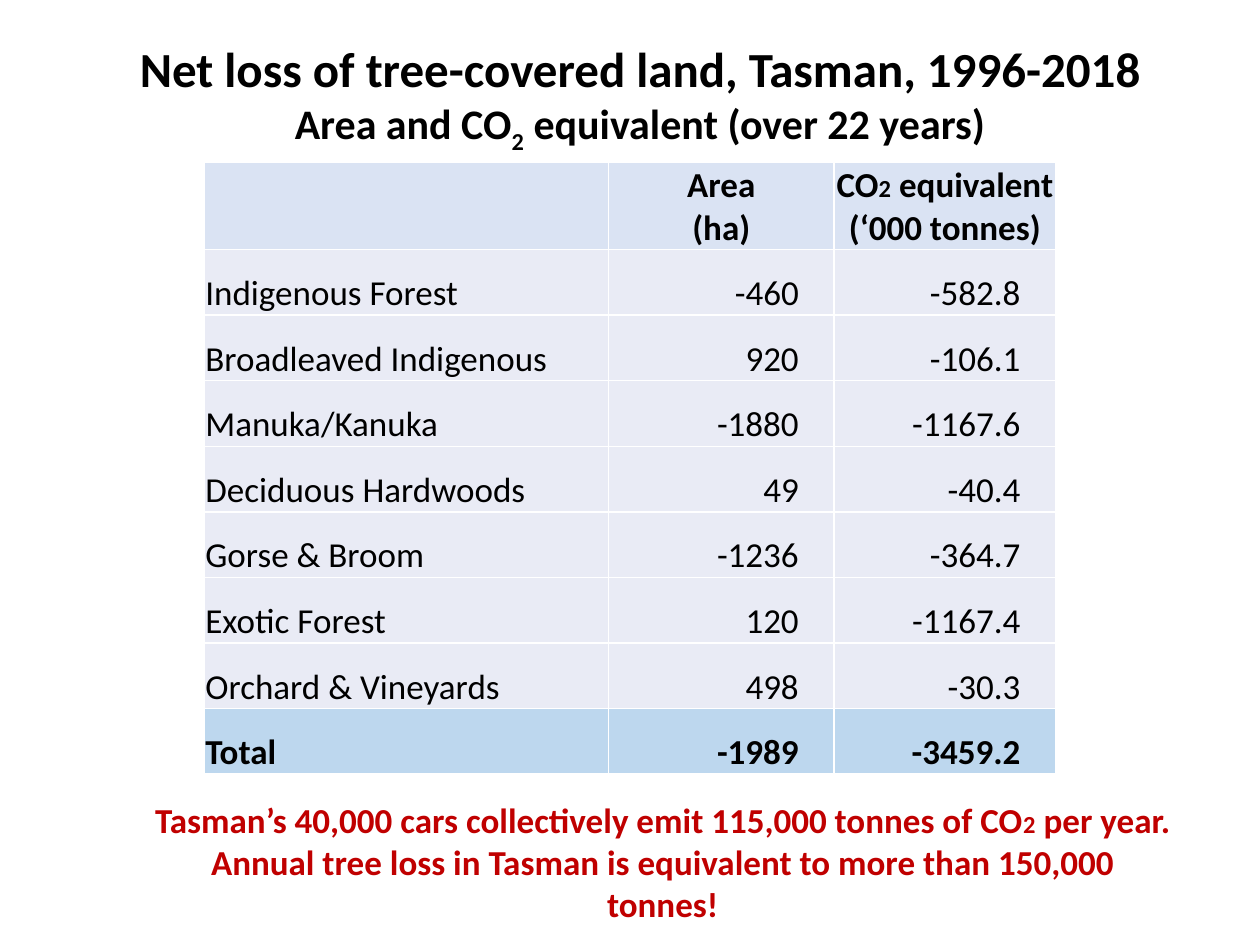
import lxml.etree
import pptx
import pptx.dml.color
import pptx.enum.text
import pptx.oxml.ns
import pptx.util

Inches = pptx.util.Inches
ALIGN = pptx.enum.text.PP_ALIGN
BLACK, RED, WHITE = "000000", "C00000", "FFFFFF"
HEADER_FILL, BODY_FILL, TOTAL_FILL = "DAE3F3", "E9EBF5", "BDD7EE"
COLUMN_WIDTHS = [3.21, 1.79, 1.76]
HEADER_HEIGHT, ROW_HEIGHT = 0.62, 0.47
LAND_COVER = [
    ("Indigenous Forest", "-460", "-582.8"),
    ("Broadleaved Indigenous", "920", "-106.1"),
    ("Manuka/Kanuka", "-1880", "-1167.6"),
    ("Deciduous Hardwoods", "49", "-40.4"),
    ("Gorse & Broom", "-1236", "-364.7"),
    ("Exotic Forest", "120", "-1167.4"),
    ("Orchard & Vineyards", "498", "-30.3"),
    ("Total", "-1989", "-3459.2"),
]


def color(hex_code):
    return pptx.dml.color.RGBColor.from_string(hex_code)


def add_span(para, text, size, bold=True, hex_code=BLACK, baseline=None):
    span = para.add_run()
    span.text = text
    span.font.name = "Calibri"
    span.font.size = pptx.util.Pt(size)
    span.font.bold = bold
    span.font.color.rgb = color(hex_code)
    if baseline:
        span._r.get_or_add_rPr().set("baseline", str(baseline * 1000))


def fill_frame(frame, paragraphs, align, line_spacing=None, **style):
    """Write paragraphs, each a list of (text, size) or (text, size, baseline)."""
    for index, spans in enumerate(paragraphs):
        para = frame.add_paragraph() if index else frame.paragraphs[0]
        para.alignment = align
        if line_spacing:
            para.line_spacing = line_spacing
        for text, size, *baseline in spans:
            add_span(para, text, size, baseline=baseline[0] if baseline else None, **style)


def add_text(page, left, top, width, height, paragraphs, hex_code=BLACK):
    box = page.shapes.add_textbox(Inches(left), Inches(top), Inches(width), Inches(height))
    box.text_frame.word_wrap = True
    fill_frame(box.text_frame, paragraphs, ALIGN.CENTER, hex_code=hex_code)


def style_cell(cell, fill, right_margin=0.01):
    properties = cell._tc.get_or_add_tcPr()
    for side in ("a:lnL", "a:lnR", "a:lnT", "a:lnB"):
        line = lxml.etree.SubElement(properties, pptx.oxml.ns.qn(side), w="12700")
        solid = lxml.etree.SubElement(line, pptx.oxml.ns.qn("a:solidFill"))
        lxml.etree.SubElement(solid, pptx.oxml.ns.qn("a:srgbClr"), val=WHITE)
    cell.fill.solid()
    cell.fill.fore_color.rgb = color(fill)
    cell.vertical_anchor = pptx.enum.text.MSO_ANCHOR.BOTTOM
    cell.margin_left = cell.margin_top = Inches(0.01)
    cell.margin_right = Inches(right_margin)
    cell.margin_bottom = 0


def add_loss_table(page, left, top):
    heights = [HEADER_HEIGHT] + [ROW_HEIGHT] * len(LAND_COVER)
    table = page.shapes.add_table(
        len(heights), len(COLUMN_WIDTHS), Inches(left), Inches(top),
        Inches(sum(COLUMN_WIDTHS)), Inches(sum(heights))).table
    table.first_row = table.horz_banding = False
    for column, width in zip(table.columns, COLUMN_WIDTHS):
        column.width = Inches(width)
    for row, height in zip(table.rows, heights):
        row.height = Inches(height)

    headings = [
        [],
        [[("Area", 20)], [("(ha)", 20)]],
        [[("CO", 20), ("2", 14), (" equivalent (‘000 tonnes)", 20)]],
    ]
    for column, paragraphs in enumerate(headings):
        cell = table.cell(0, column)
        style_cell(cell, HEADER_FILL)
        fill_frame(cell.text_frame, paragraphs, ALIGN.CENTER)

    for row, values in enumerate(LAND_COVER, start=1):
        is_total = row == len(LAND_COVER)
        for column, value in enumerate(values):
            cell = table.cell(row, column)
            style_cell(cell, TOTAL_FILL if is_total else BODY_FILL, 0.28 if column else 0.01)
            fill_frame(cell.text_frame, [[(value, 20)]],
                       ALIGN.RIGHT if column else ALIGN.LEFT, 1.5, bold=is_total)


def main():
    deck = pptx.Presentation()
    deck.slide_width, deck.slide_height = Inches(10), Inches(7.5)
    page = deck.slides.add_slide(deck.slide_layouts[6])
    add_loss_table(page, 1.62, 1.29)
    add_text(page, 0.76, 0.26, 8.64, 0.98, [
        [("Net loss of tree-covered land, Tasman, 1996-2018", 28)],
        [("Area and CO", 24), ("2", 24, -25), (" equivalent (over 22 years)", 24)],
    ])
    add_text(page, 1.12, 6.29, 8.28, 1.11, [[
        ("Tasman’s 40,000 cars collectively emit 115,000 tonnes of CO", 20),
        ("2", 14),
        (" per year. Annual tree loss in Tasman is equivalent to more than 150,000 tonnes!", 20),
    ]], RED)
    deck.save("out.pptx")


if __name__ == "__main__":
    main()
